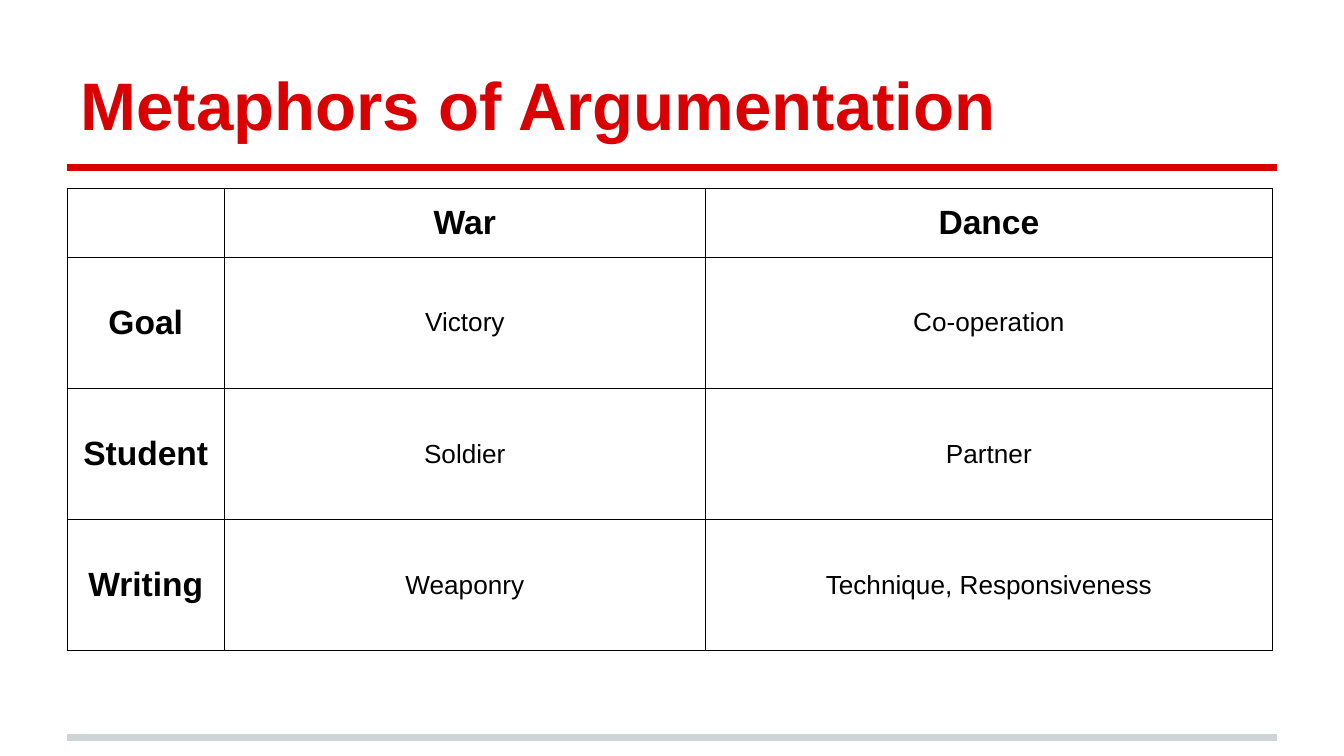
import pptx
import pptx.dml.color
import pptx.enum.shapes
import pptx.enum.text
import pptx.oxml
import pptx.oxml.ns
import pptx.util

Cm = pptx.util.Cm
Pt = pptx.util.Pt
RED, GREY, BLACK = "DA0002", "CFD4D4", "000000"
LEFT, WIDTH = 1.27, 22.86
COLUMN_WIDTHS = [2.97, 9.09, 10.72]
ROW_HEIGHTS = [1.3, 2.48, 2.48, 2.48]
METAPHORS = [
    ["", "War", "Dance"],
    ["Goal", "Victory", "Co-operation"],
    ["Student", "Soldier", "Partner"],
    ["Writing", "Weaponry", "Technique, Responsiveness"],
]


def color(value):
    return pptx.dml.color.RGBColor.from_string(value)


class SlideBuilder:
    """Draw styled elements on the current slide."""

    font = "Arial"
    inset = Cm(0.254)

    def __init__(self, slide):
        self.slide = slide

    def run(self, paragraph, text, size, fill, bold):
        run = paragraph.add_run()
        run.text = text
        run.font.name = self.font
        run.font.size = Pt(size)
        run.font.bold = bold
        run.font.color.rgb = color(fill)

    def insets(self, target):
        target.margin_left = target.margin_right = self.inset
        target.margin_top = target.margin_bottom = self.inset

    def rule(self, top, fill):
        connector = self.slide.shapes.add_connector(
            pptx.enum.shapes.MSO_CONNECTOR.STRAIGHT,
            Cm(LEFT), Cm(top), Cm(LEFT + WIDTH), Cm(top))
        connector.line.color.rgb = color(fill)
        connector.line.width = Pt(4)
        properties = connector._element.spPr
        properties.append(pptx.oxml.ns.qn and pptx.oxml.parse_xml(
            f'<a:effectLst {pptx.oxml.ns.nsdecls("a")}/>'))

    def title(self, text, top, height):
        shape = self.slide.shapes.add_textbox(Cm(LEFT), Cm(top), Cm(WIDTH), Cm(height))
        frame = shape.text_frame
        frame.word_wrap = True
        frame.vertical_anchor = pptx.enum.text.MSO_ANCHOR.BOTTOM
        self.insets(frame)
        self.run(frame.paragraphs[0], text, 36, RED, True)

    def borders(self, cell):
        properties = cell._tc.get_or_add_tcPr()
        for side in ("lnL", "lnR", "lnT", "lnB"):
            properties.append(pptx.oxml.parse_xml(
                f'<a:{side} {pptx.oxml.ns.nsdecls("a")} w="{Pt(0.75)}"><a:solidFill>'
                f'<a:srgbClr val="{BLACK}"/></a:solidFill></a:{side}>'))

    def cell(self, cell, text, heading):
        self.borders(cell)
        cell.fill.background()
        cell.vertical_anchor = pptx.enum.text.MSO_ANCHOR.MIDDLE
        self.insets(cell)
        if text:
            paragraph = cell.text_frame.paragraphs[0]
            paragraph.alignment = pptx.enum.text.PP_ALIGN.CENTER
            self.run(paragraph, text, 18 if heading else 14, BLACK, heading)

    def table(self, rows, top):
        table = self.slide.shapes.add_table(
            len(rows), len(rows[0]), Cm(LEFT), Cm(top),
            Cm(sum(COLUMN_WIDTHS)), Cm(sum(ROW_HEIGHTS))).table
        table.first_row = table.horz_banding = False
        for column, width in zip(table.columns, COLUMN_WIDTHS):
            column.width = Cm(width)
        for row, height in zip(table.rows, ROW_HEIGHTS):
            row.height = Cm(height)
        for i, texts in enumerate(rows):
            for j, text in enumerate(texts):
                self.cell(table.cell(i, j), text, i == 0 or j == 0)


def main():
    presentation = pptx.Presentation()
    presentation.slide_width = Cm(25.4)
    presentation.slide_height = Cm(14.29)
    builder = SlideBuilder(presentation.slides.add_slide(presentation.slide_layouts[6]))
    builder.rule(13.94, GREY)
    builder.rule(3.17, RED)
    builder.title("Metaphors of Argumentation", 0.58, 2.39)
    builder.table(METAPHORS, 3.56)
    presentation.save("out.pptx")


if __name__ == "__main__":
    main()
